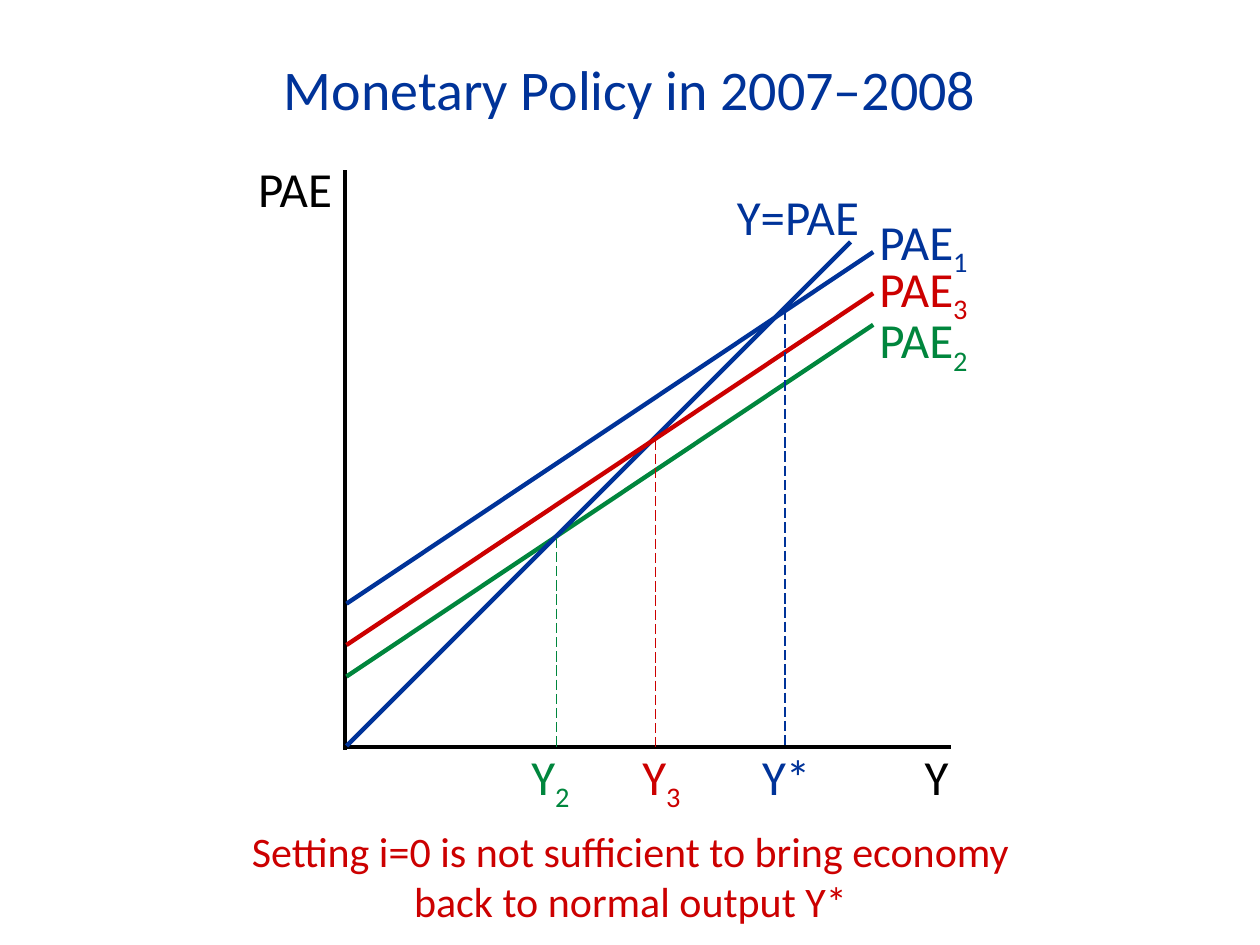
import pptx
import pptx.util
import pptx.dml.color
import pptx.enum.dml
import pptx.enum.shapes
import pptx.enum.text
import lxml.etree

Pt = pptx.util.Pt
RGB = pptx.dml.color.RGBColor
BLUE = RGB(0x00, 0x33, 0x99)
RED = RGB(0xCC, 0x00, 0x00)
GREEN = RGB(0x00, 0x86, 0x3D)
BLACK = RGB(0x00, 0x00, 0x00)
CENTER = pptx.enum.text.PP_ALIGN.CENTER
DRAW = "{http://schemas.openxmlformats.org/drawingml/2006/main}"

deck = pptx.Presentation()
deck.slide_width, deck.slide_height = Pt(720), Pt(540)
slide = deck.slides.add_slide(deck.slide_layouts[5])


def write(shape, text, color, size=28, sub="", **form):
    """Fill a shape with one paragraph, with an optional subscript."""
    frame = shape.text_frame
    frame.word_wrap = True
    para = frame.paragraphs[0]
    for name, value in form.items():
        setattr(para, name, value)
    for part in filter(None, (text, sub)):
        run = para.add_run()
        run.text = part
        look = {"size": Pt(size), "name": "Calibri"}
        for name, value in look.items():
            setattr(run.font, name, value)
        run.font.color.rgb = color
    if sub:
        run.font._element.set("baseline", "-25000")


def draw(x1, y1, x2, y2, color, width=2.5, dash=None):
    line = slide.shapes.add_connector(
        pptx.enum.shapes.MSO_CONNECTOR.STRAIGHT,
        Pt(x1), Pt(y1), Pt(x2), Pt(y2))
    look = {"width": Pt(width), "dash_style": dash}
    for name, value in look.items():
        setattr(line.line, name, value)
    line.line.color.rgb = color
    lxml.etree.SubElement(line._element.spPr, DRAW + "effectLst")


# Title
title = slide.shapes.title
place = {"left": Pt(50.4), "top": Pt(27.4), "width": Pt(619.2), "height": Pt(46)}
for name, value in place.items():
    setattr(title, name, value)
title.text_frame.vertical_anchor = pptx.enum.text.MSO_ANCHOR.MIDDLE
write(title, "Monetary Policy in 2007–2008", BLUE, 32, alignment=CENTER)

# Axes, expenditure curves and the 45-degree line
left, base, right, rise = 198, 427, 499, 201
draw(197.3, 97.2, 197.3, 428.3, BLACK)
draw(left, base, 543.6, base, BLACK)
for start, color in ((386.6, GREEN), (345, BLUE)):
    draw(left, start, right, start - rise, color)
draw(left, 426.3, left + 288, 426.3 - 288, BLUE)
draw(left, 368.6, right, 368.6 - rise, RED)

# Drop lines from each equilibrium, which lies on the 45-degree line
for x, color in ((318.2, GREEN), (374.4, RED), (448.6, BLUE)):
    draw(x, left + base + 0.5 - x, x, base, color, 0.75,
         pptx.enum.dml.MSO_LINE.LONG_DASH)

# Labels: text, subscript, left, top, width, color
labels = (
    ("PAE", "1", 495.4, 117.4, 75.6, BLUE),
    ("PAE", "3", 495.4, 144, 75.6, RED),
    ("PAE", "2", 495.4, 173.5, 75.6, GREEN),
    ("Y=PAE", "", 414, 103, 90, BLUE),
    ("Y", "2", 296.6, 423, 47.5, GREEN),
    ("Y", "3", 360, 423, 47.5, RED),
    ("Y*", "", 428.4, 423, 47.5, BLUE),
    ("Y", "", 521.3, 423, 35.3, BLACK),
)
for text, sub, x, y, wide, color in labels:
    box = slide.shapes.add_textbox(Pt(x), Pt(y), Pt(wide), Pt(41))
    write(box, text, color, sub=sub)

box = slide.shapes.add_textbox(Pt(140.4), Pt(93.6), Pt(59), Pt(35.3))
write(box, "PAE", BLACK, line_spacing=0.8)

# Conclusion
box = slide.shapes.add_textbox(Pt(112.3), Pt(468), Pt(496), Pt(65.5))
write(box, "Setting i=0 is not sufficient to bring economy back to normal output Y*",
      RED, 24, alignment=CENTER)

deck.save("out.pptx")
